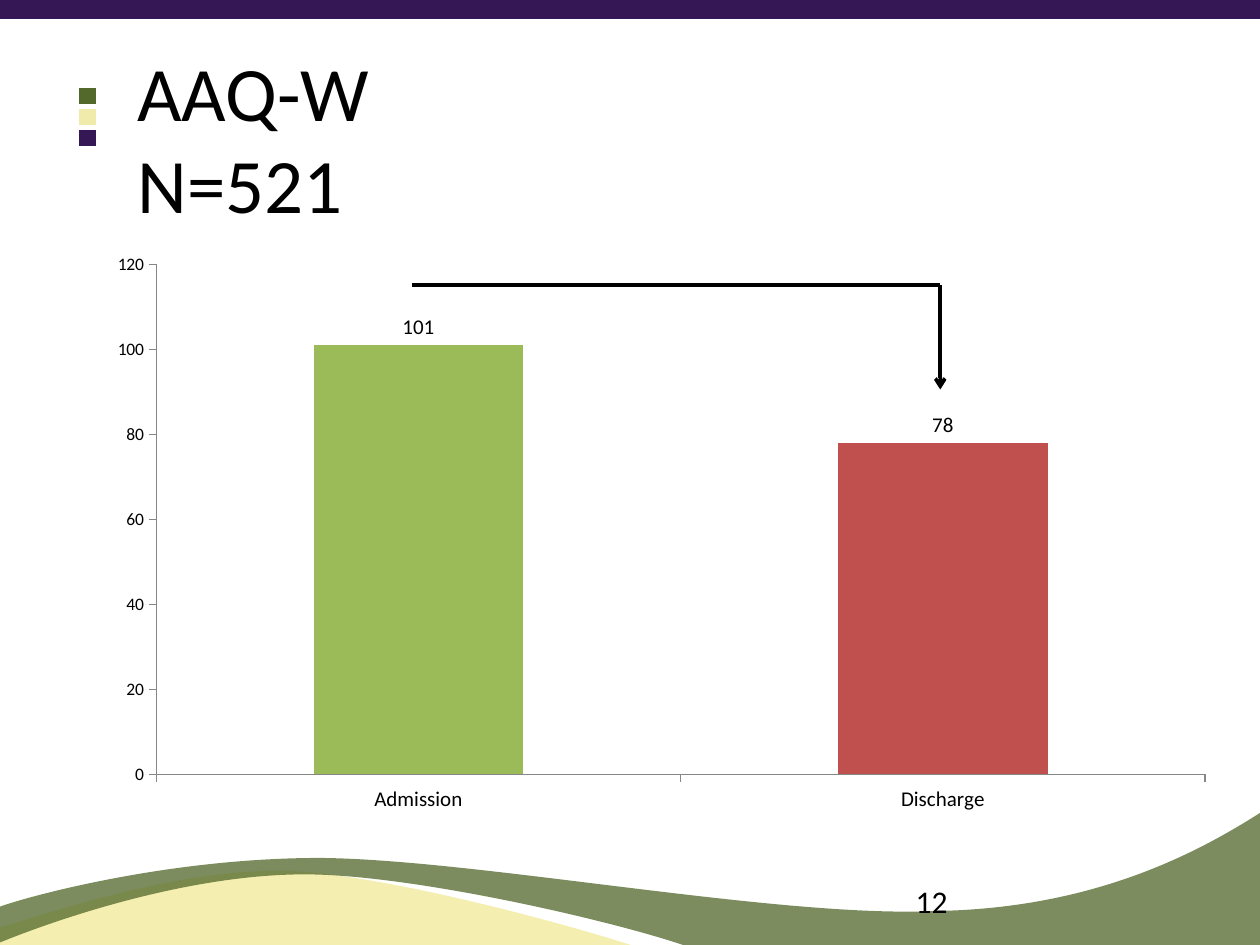
"""Build the AAQ-W admission and discharge slide."""
from lxml import etree
from pptx import Presentation
from pptx import util as u
from pptx.chart.data import CategoryChartData
from pptx.dml.color import RGBColor
from pptx.enum import chart as ch, shapes, text
from pptx.oxml import parse_xml
from pptx.oxml.ns import nsdecls, qn

BLACK = RGBColor(0x00, 0x00, 0x00)
GREY = RGBColor(0x86, 0x86, 0x86)
PURPLE = RGBColor(0x35, 0x17, 0x56)
CREAM = RGBColor(0xF0, 0xEA, 0xAB)
YELLOW = RGBColor(0xF4, 0xEF, 0xB1)
MOSS = RGBColor(0x53, 0x69, 0x2C)
GREEN = RGBColor(0x9B, 0xBB, 0x59)
RED = RGBColor(0xC0, 0x50, 0x4D)
FONT = "Calibri"

TITLE_LINES = ["AAQ-W", "N=521"]
PAGE_NUMBER = "12"
SCORES = [("Admission", 101, GREEN), ("Discharge", 78, RED)]
PLOT_LAYOUT = {"x": 0.053, "y": 0.036, "w": 0.927, "h": 0.878}
MARKERS = [(54.9, MOSS), (66.8, CREAM), (78.7, PURPLE)]
CREAM_WAVE = [
    [(375, 545)],
    [(353.5, 536.4), (229, 500.4), (166.3, 497.8)],
    [(103.7, 495.4), (28, 522), (0, 530)],
    [(0, 545)],
]
GREEN_WAVE = [
    [(720.7, 545)],
    [(403.2, 545)],
    [(378, 532.8), (242.6, 499.7), (174.2, 499.7)],
    [(105.8, 499.7), (30.2, 526.3), (0, 538.6)],
    [(-0.7, 518.4)],
    [(12.2, 513.4), (93.6, 490.3), (182.9, 490.3)],
    [(272.9, 491), (445.7, 524.9), (535, 520.6)],
    [(627.8, 519.1), (687.6, 485.3), (721.4, 463.7)],
]


def add_wave(slide, segments, color, alpha=None):
    outline = [(x * 100, y * 100) for segment in segments for x, y in segment]
    builder = slide.shapes.build_freeform(*outline[0], scale=u.Pt(1) / 100)
    builder.add_line_segments(outline[1:], close=True)
    wave = builder.convert_to_shape()
    steps = iter(list(wave._element.iter(qn("a:lnTo"))))
    for segment in segments[1:]:
        first, *others = [next(steps) for _ in segment]
        if others:
            first.tag = qn("a:cubicBezTo")
            for step in others:
                first.append(step[0])
                step.getparent().remove(step)
    wave.shadow.inherit = False
    wave.fill.solid()
    wave.fill.fore_color.rgb = color
    wave.line.fill.background()
    if alpha:
        fill_color = wave.fill._xPr.find(qn("a:solidFill"))[0]
        etree.SubElement(fill_color, qn("a:alpha")).set("val", str(alpha * 1000))


def add_line(slide, start, end, color, width, square=False, arrow=False):
    line = slide.shapes.add_connector(
        shapes.MSO_CONNECTOR.STRAIGHT, *(u.Pt(v) for v in start + end))
    line.line.color.rgb = color
    line.line.width = u.Pt(width)
    outline = line.line._get_or_add_ln()
    if square:
        outline.set("cap", "sq")
    if arrow:
        etree.SubElement(outline, qn("a:tailEnd")).set("type", "arrow")
    etree.SubElement(line._element.spPr, qn("a:effectLst"))


def style_font(font, size):
    font.name = FONT
    font.size = u.Pt(size)
    font.color.rgb = BLACK


def add_title(slide):
    title = slide.shapes.title
    title.left, title.top = u.Pt(71.3), u.Pt(21.6)
    title.width, title.height = u.Pt(612.7), u.Pt(90)
    frame = title.text_frame
    frame.word_wrap = True
    frame.auto_size = text.MSO_AUTO_SIZE.NONE
    frame.vertical_anchor = text.MSO_ANCHOR.TOP
    paragraph = frame.paragraphs[0]
    paragraph.alignment = text.PP_ALIGN.LEFT
    for index, words in enumerate(TITLE_LINES):
        if index:
            paragraph.add_line_break()
        run = paragraph.add_run()
        run.text = words
        style_font(run.font, 44)


def add_page_number(slide):
    box = slide.shapes.add_textbox(u.Pt(516.2), u.Pt(500.4), u.Pt(167.8), u.Pt(28.8))
    box.text_frame.word_wrap = True
    run = box.text_frame.paragraphs[0].add_run()
    run.text = PAGE_NUMBER
    style_font(run.font, 18)


def add_score_chart(slide):
    data = CategoryChartData()
    data.categories = [name for name, _, _ in SCORES]
    data.add_series("Series 1", [score for _, score, _ in SCORES])
    chart = slide.shapes.add_chart(
        ch.XL_CHART_TYPE.COLUMN_CLUSTERED,
        u.Pt(55), u.Pt(139.2), u.Pt(646.6), u.Pt(331.9), data).chart
    chart.has_legend = False
    chart.has_title = False
    style_font(chart.font, 10)
    for axis, size in ((chart.category_axis, 12), (chart.value_axis, 10)):
        axis.has_major_gridlines = False
        axis.major_tick_mark = ch.XL_TICK_MARK.OUTSIDE
        axis.minor_tick_mark = ch.XL_TICK_MARK.NONE
        axis.format.line.color.rgb = GREY
        axis.format.line.width = u.Pt(0.75)
        style_font(axis.tick_labels.font, size)
    chart.value_axis.minimum_scale = 0
    chart.value_axis.maximum_scale = 120
    chart.value_axis.major_unit = 20
    plot = chart.plots[0]
    plot.gap_width = 150
    plot.vary_by_categories = False
    scores = plot.series[0]
    for index, (_, _, color) in enumerate(SCORES):
        fill = scores.points[index].format.fill
        fill.solid()
        fill.fore_color.rgb = color
    labels = scores.data_labels
    labels.show_value = True
    labels.position = ch.XL_LABEL_POSITION.OUTSIDE_END
    style_font(labels.font, 12)
    sizes = "".join(f'<c:{key} val="{value}"/>' for key, value in PLOT_LAYOUT.items())
    layout = parse_xml(
        f'<c:layout {nsdecls("c")}><c:manualLayout><c:layoutTarget val="inner"/>'
        f'<c:xMode val="edge"/><c:yMode val="edge"/>{sizes}</c:manualLayout></c:layout>')
    plot_area = chart._chartSpace.chart.plotArea
    for old in plot_area.findall(qn("c:layout")):
        plot_area.remove(old)
    plot_area.insert(0, layout)


def main():
    deck = Presentation()
    deck.slide_width, deck.slide_height = u.Pt(720), u.Pt(540)
    slide = deck.slides.add_slide(deck.slide_layouts[5])
    add_wave(slide, CREAM_WAVE, YELLOW)
    add_line(slide, (3.6, 5.4), (716.4, 5.4), PURPLE, 10.5, square=True)
    for top, color in MARKERS:
        add_line(slide, (49.7, top), (50.4, top), color, 9, square=True)
    add_wave(slide, GREEN_WAVE, MOSS, alpha=76)
    add_title(slide)
    add_page_number(slide)
    add_score_chart(slide)
    corner = (537.3, 162.9)
    add_line(slide, (235.4, 162.9), corner, BLACK, 2)
    add_line(slide, corner, (537.3, 222.6), BLACK, 2, arrow=True)
    deck.save("out.pptx")


if __name__ == "__main__":
    main()
